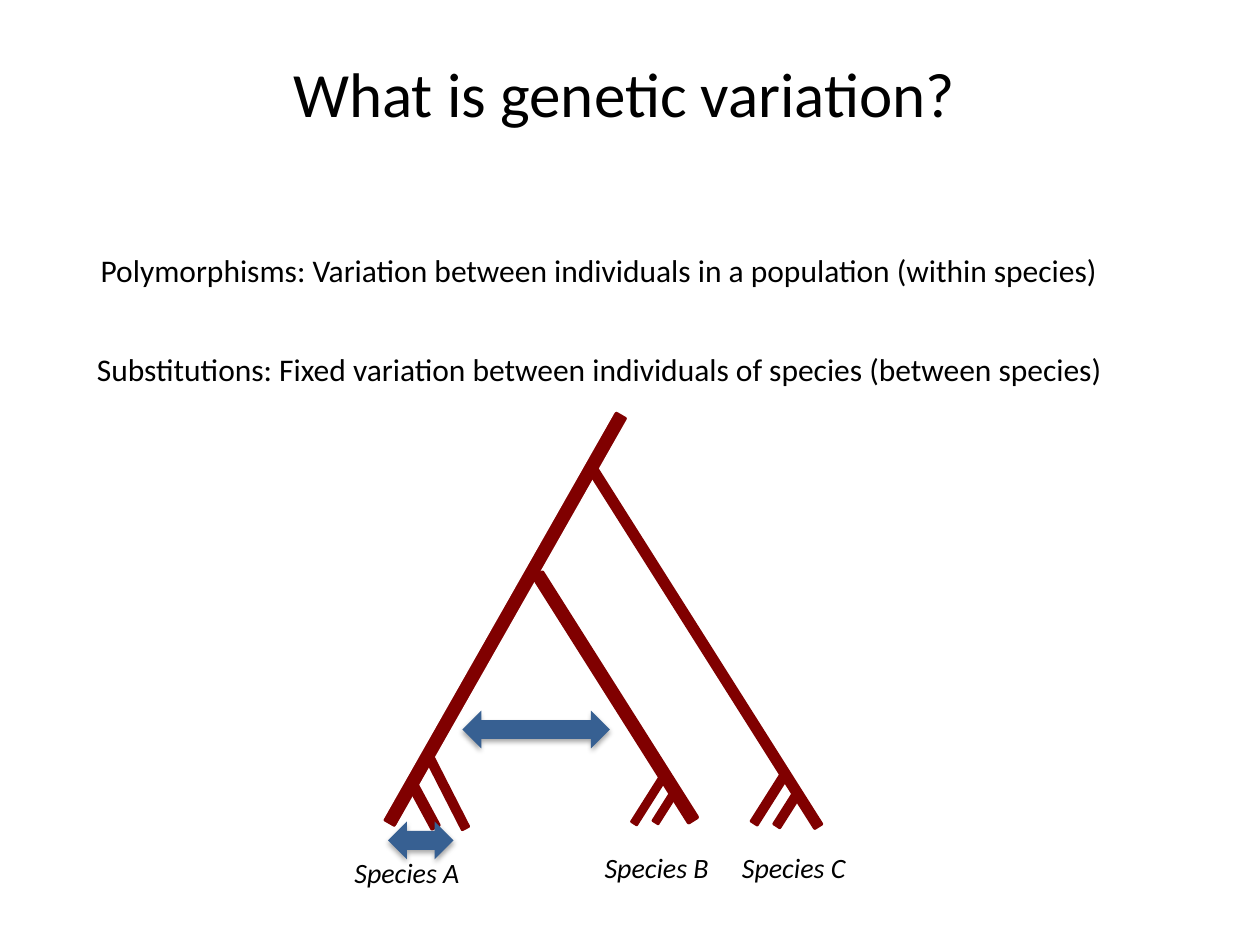
"""Build a slide on genetic variation with a species tree."""
import lxml.etree
import pptx
import pptx.dml.color
import pptx.enum.shapes
import pptx.enum.text
import pptx.oxml
import pptx.oxml.ns
import pptx.util
from pptx.util import Inches

BLACK = pptx.dml.color.RGBColor(0x00, 0x00, 0x00)
WHITE = pptx.dml.color.RGBColor(0xFF, 0xFF, 0xFF)
MAROON = pptx.dml.color.RGBColor(0x80, 0x00, 0x00)
BLUE = pptx.dml.color.RGBColor(0x37, 0x60, 0x92)
SHAPE_TYPE = pptx.enum.shapes.MSO_SHAPE
LEFT = pptx.enum.text.PP_ALIGN.LEFT
CENTER = pptx.enum.text.PP_ALIGN.CENTER
SHADOW_XML = (
    f'<a:outerShdw {pptx.oxml.ns.nsdecls("a")} blurRad="39370" dist="22860" dir="5400000" rotWithShape="0">'
    '<a:srgbClr val="000000"><a:alpha val="35000"/></a:srgbClr></a:outerShdw>'
)


def add_text(shapes, text, box, size, italic=False, alignment=LEFT):
    text_box = shapes.add_textbox(*map(Inches, box))
    text_frame = text_box.text_frame
    text_frame.text = text
    text_frame.word_wrap = False
    text_frame.auto_size = pptx.enum.text.MSO_AUTO_SIZE.SHAPE_TO_FIT_TEXT
    paragraph = text_frame.paragraphs[0]
    paragraph.alignment = alignment
    font = paragraph.runs[0].font
    font.name = "Calibri"
    font.size = pptx.util.Pt(size)
    font.italic = italic
    font.color.rgb = BLACK


def add_filled_shape(shapes, shape_type, box, color):
    shape = shapes.add_shape(shape_type, *map(Inches, box))
    shape.shadow.inherit = False
    shape.fill.solid()
    shape.fill.fore_color.rgb = color
    shape.line.fill.background()
    return shape


presentation = pptx.Presentation()
presentation.slide_width = Inches(10)
presentation.slide_height = Inches(7.5)
slide = presentation.slides.add_slide(presentation.slide_layouts[6])

add_text(slide.shapes, "What is genetic variation?", (2.23, 0.38, 5.53, 0.71), 36)
add_text(
    slide.shapes,
    "Polymorphisms: Variation between individuals in a population (within species)",
    (0.7, 1.94, 8.22, 0.4),
    18,
)
add_text(
    slide.shapes,
    "Substitutions: Fixed variation between individuals of species (between species)",
    (0.67, 2.73, 8.28, 0.4),
    18,
)
add_text(slide.shapes, "Species A", (2.7, 6.74, 1.06, 0.37), 16, True, CENTER)

tree = slide.shapes.add_group_shape()
trunk = add_filled_shape(tree.shapes, SHAPE_TYPE.ROUNDED_RECTANGLE, (3.95, 3.04, 0.12, 3.75), MAROON)
trunk.rotation = 29.6
trunk.line.color.rgb = WHITE
trunk.line.width = pptx.util.Pt(0.75)

branches = [
    ((5.55, 3.44, 0.09, 3.39), 147.7),
    ((4.83, 4.37, 0.11, 2.33), 147.7),
    ((6.07, 6.09, 0.08, 0.49), 212.3),
    ((6.21, 6.25, 0.08, 0.34), 212.3),
    ((5.12, 6.1, 0.07, 0.48), 212.3),
    ((5.25, 6.23, 0.07, 0.33), 212.3),
    ((3.5, 5.92, 0.08, 0.7), 153),
    ((3.32, 6.19, 0.09, 0.41), 151.7),
]
for box, rotation in branches:
    branch = add_filled_shape(tree.shapes, SHAPE_TYPE.ROUNDED_RECTANGLE, box, MAROON)
    branch.rotation = rotation

for name, left in (("Species B", 4.7), ("Species C", 5.79)):
    add_text(tree.shapes, name, (left, 6.7, 1.09, 0.37), 16, True)

for box in ((3.08, 6.52, 0.52, 0.3), (3.67, 5.64, 1.17, 0.3)):
    arrow = add_filled_shape(slide.shapes, SHAPE_TYPE.LEFT_RIGHT_ARROW, box, BLUE)
    effects = arrow.element.spPr.find(pptx.oxml.ns.qn("a:effectLst"))
    effects.append(lxml.etree.fromstring(SHADOW_XML))

presentation.save("out.pptx")
